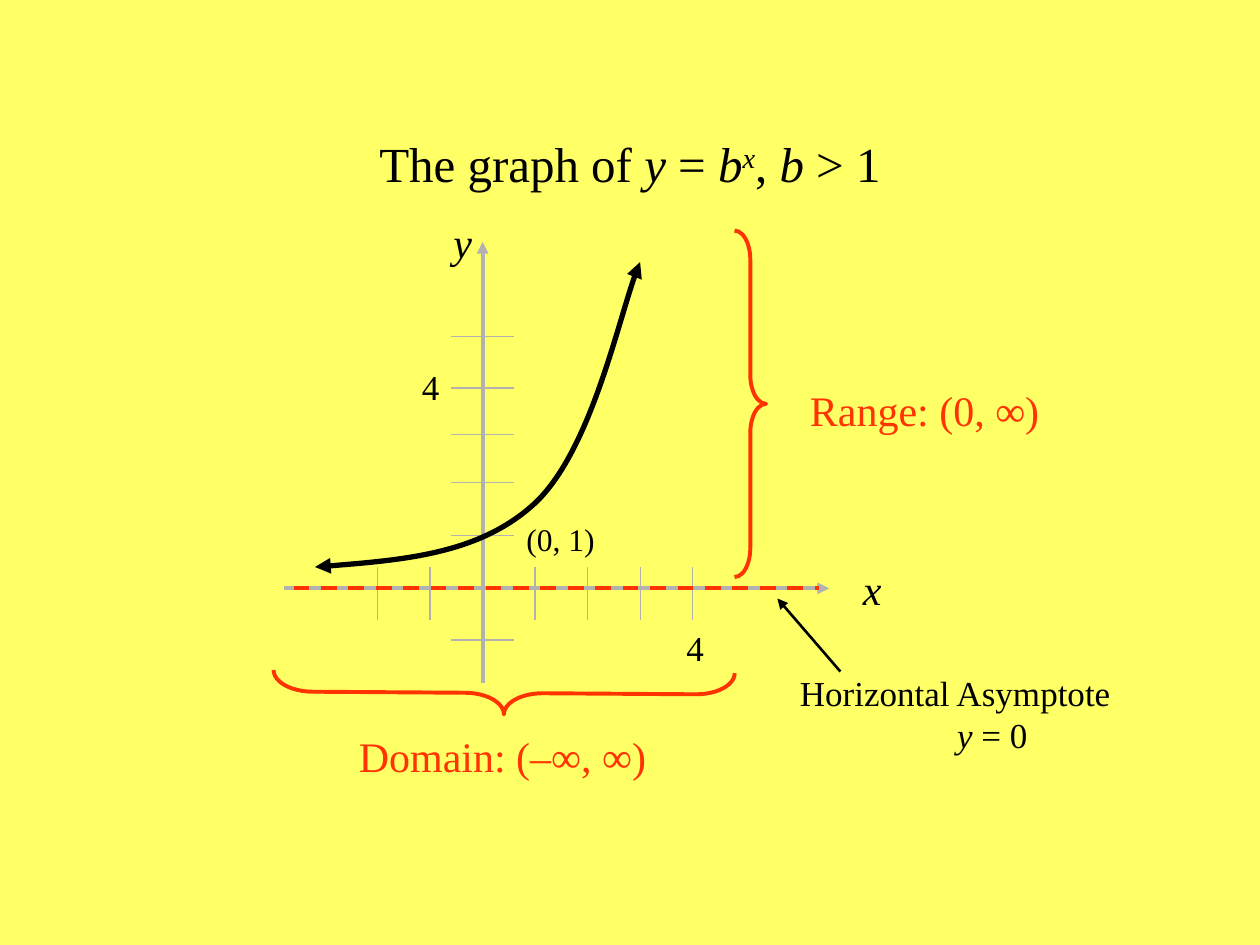
from lxml import etree
from pptx import Presentation
from pptx.dml.color import RGBColor
from pptx.enum.dml import MSO_LINE_DASH_STYLE as Dash
from pptx.enum.shapes import MSO_CONNECTOR as Connector, MSO_SHAPE as Shape
from pptx.enum.text import MSO_ANCHOR as Anchor, PP_ALIGN as Align
from pptx.oxml.ns import qn
from pptx.util import Inches, Pt

COLORS = {"paper": "FFFF66", "ink": "000000", "axis": "B2B2B2", "accent": "FF3300"}
FONT = "Times New Roman"
UNIT = 0.417
Y_TICKS = (-0.41, 0.42, 0.84, 1.22, 1.59, 2.0)
X_TICKS = (-2, -1, 1, 2, 3, 4)
CURVE = ((0.25, 2.83), (0.91, 2.78), (1.57, 2.72), (2.0, 2.32),
         (2.43, 1.91), (2.69, 0.73), (2.83, 0.41))


def rgb(name):
    return RGBColor.from_string(COLORS[name])


def add_text(slide, box, *paragraphs, size=24, color="ink", aligns=(Align.LEFT,), anchor=Anchor.TOP):
    frame = slide.shapes.add_textbox(*map(Inches, box)).text_frame
    frame.word_wrap = True
    frame.vertical_anchor = anchor
    for index, (runs, align) in enumerate(zip(paragraphs, aligns)):
        paragraph = frame.paragraphs[0] if index == 0 else frame.add_paragraph()
        paragraph.alignment = align
        for text, style in runs:
            run = paragraph.add_run()
            run.text = text
            run.font.name = FONT
            run.font.size = Pt(size)
            run.font.color.rgb = rgb(color)
            run.font.italic = "i" in style
            if "^" in style:
                run.font._element.set("baseline", "30000")


def style_line(line, color, width, arrows=()):
    line.color.rgb = rgb(color)
    line.width = Pt(width)
    for end in arrows:
        etree.SubElement(line._get_or_add_ln(), qn(f"a:{end}"), type="triangle")


def add_line(slide, start, end, color="axis", width=0.75, arrows=(), dash=None):
    connector = slide.shapes.add_connector(Connector.STRAIGHT, *map(Inches, (*start, *end)))
    if dash:
        connector.line.dash_style = dash
    style_line(connector.line, color, width, arrows)
    etree.SubElement(connector._element.spPr, qn("a:effectLst"))


def add_curve(slide, points):
    start, *rest = [tuple(map(Inches, point)) for point in points]
    builder = slide.shapes.build_freeform(*start, scale=1.0)
    builder.add_line_segments(rest, close=False)
    curve = builder.convert_to_shape()
    curve.shadow.inherit = False
    curve.fill.background()
    style_line(curve.line, "ink", 3, ("headEnd", "tailEnd"))
    outline = curve._element.find(".//" + qn("a:path"))
    segments = outline.findall(qn("a:lnTo"))
    for first in range(0, len(segments), 3):
        bezier = etree.SubElement(outline, qn("a:cubicBezTo"))
        for segment in segments[first:first + 3]:
            bezier.append(segment[0])
            outline.remove(segment)


def add_brace(slide, box, bend, flip, rotation=0):
    brace = slide.shapes.add_shape(Shape.LEFT_BRACE, *map(Inches, box))
    brace.shadow.inherit = False
    brace.fill.background()
    brace.adjustments[0] = bend
    brace.adjustments[1] = 0.5
    brace.rotation = rotation
    brace._element.spPr.find(qn("a:xfrm")).set(flip, "1")
    style_line(brace.line, "accent", 2.25)


def add_title(slide, box):
    runs = [("The graph of ", ""), ("y", "i"), (" = ", ""), ("b", "i"),
            ("x", "i^"), (", ", ""), ("b", "i"), (" > 1", "")]
    add_text(slide, box, runs, size=28, aligns=(Align.CENTER,), anchor=Anchor.MIDDLE)


def add_plot(slide, box):
    left, top, width, height = box
    origin_x, origin_y = left + 1.58, top + 3
    axis_end = left + 4.33
    add_line(slide, (origin_x, top + height), (origin_x, top + 0.25), width=2.25, arrows=("tailEnd",))
    add_line(slide, (left, origin_y), (axis_end, origin_y), width=2.25, arrows=("tailEnd",))
    for offset in Y_TICKS:
        y = origin_y - offset
        add_line(slide, (origin_x - 0.25, y), (origin_x + 0.25, y))
    for step in X_TICKS:
        x = origin_x + step * UNIT
        add_line(slide, (x, origin_y - 0.17), (x, origin_y + 0.25))
    add_line(slide, (left + 0.08, origin_y), (axis_end - 0.08, origin_y),
             color="accent", width=2.25, dash=Dash.DASH)
    add_curve(slide, [(left + x, top + y) for x, y in CURVE])
    labels = (("y", "i", 24, 1.25, 0, 0.5, 0.5),
              ("x", "i", 24, 4.5, 2.75, 0.42, 0.5),
              ("(0, 1)", "", 18, 1.83, 2.41, 0.75, 0.4),
              ("4", "", 20, 3.1, 3.25, 0.5, 0.44),
              ("4", "", 20, 1.0, 1.18, 0.5, 0.44))
    for text, style, size, x, y, label_width, label_height in labels:
        add_text(slide, (left + x, top + y, label_width, label_height), [(text, style)], size=size)


def add_range(slide, box):
    left, top, width, height = box
    add_brace(slide, (left, top, 0.25, height), 0.917, "flipH")
    add_text(slide, (left + 0.5, top + 1.17, width - 0.5, 0.5), [("Range: (0, ∞)", "")], color="accent")


def add_domain(slide, box):
    left, top, width, height = box
    depth = 0.34
    shift = (width - depth) / 2
    add_brace(slide, (left + shift, top - shift, depth, width), 0.907, "flipV", rotation=270.4)
    add_text(slide, (left + 0.58, top + height - 0.5, 2.83, 0.5),
             [("Domain: (–∞, ∞)", "")], color="accent")


def add_asymptote_note(slide, box):
    left, top, width, height = box
    add_line(slide, (left + 0.5, top + 0.58), (left, top), color="ink", width=1.5, arrows=("tailEnd",))
    add_text(slide, (left + 0.08, top + 0.53, width - 0.08, height - 0.53),
             [("Horizontal Asymptote", "")], [("y", "i"), (" = 0", "")],
             size=20, aligns=(Align.LEFT, Align.CENTER))


def main():
    deck = Presentation()
    deck.slide_width, deck.slide_height = Inches(10), Inches(7.5)
    slide = deck.slides.add_slide(deck.slide_layouts[6])
    slide.background.fill.solid()
    slide.background.fill.fore_color.rgb = rgb("paper")
    add_title(slide, (0.75, 0.67, 8.5, 1.25))
    add_plot(slide, (2.25, 1.67, 4.92, 3.75))
    add_range(slide, (5.83, 1.83, 2.67, 2.75))
    add_domain(slide, (2.17, 5.33, 3.66, 0.92))
    add_asymptote_note(slide, (6.17, 4.75, 3.33, 1.3))
    deck.save("out.pptx")


if __name__ == "__main__":
    main()
